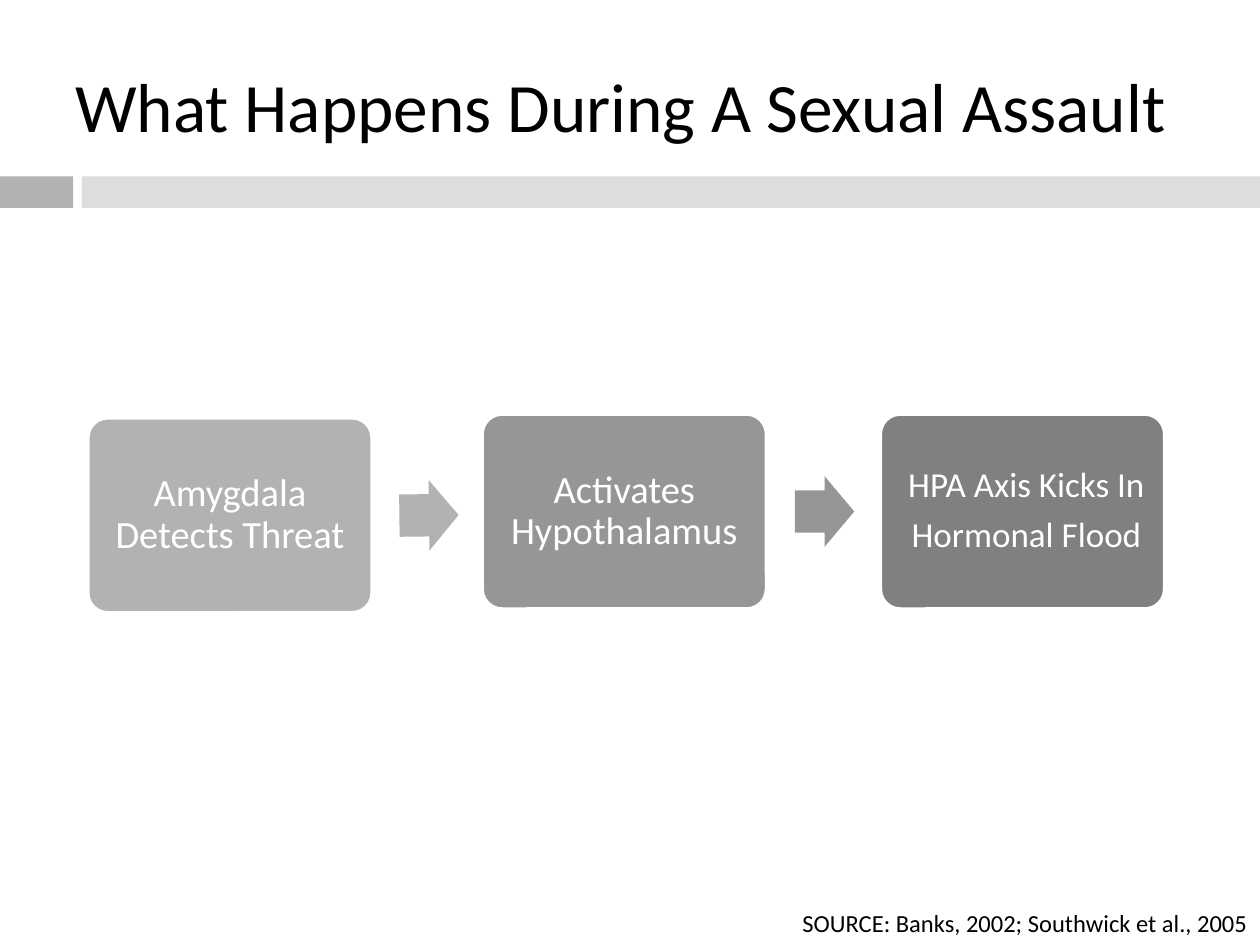
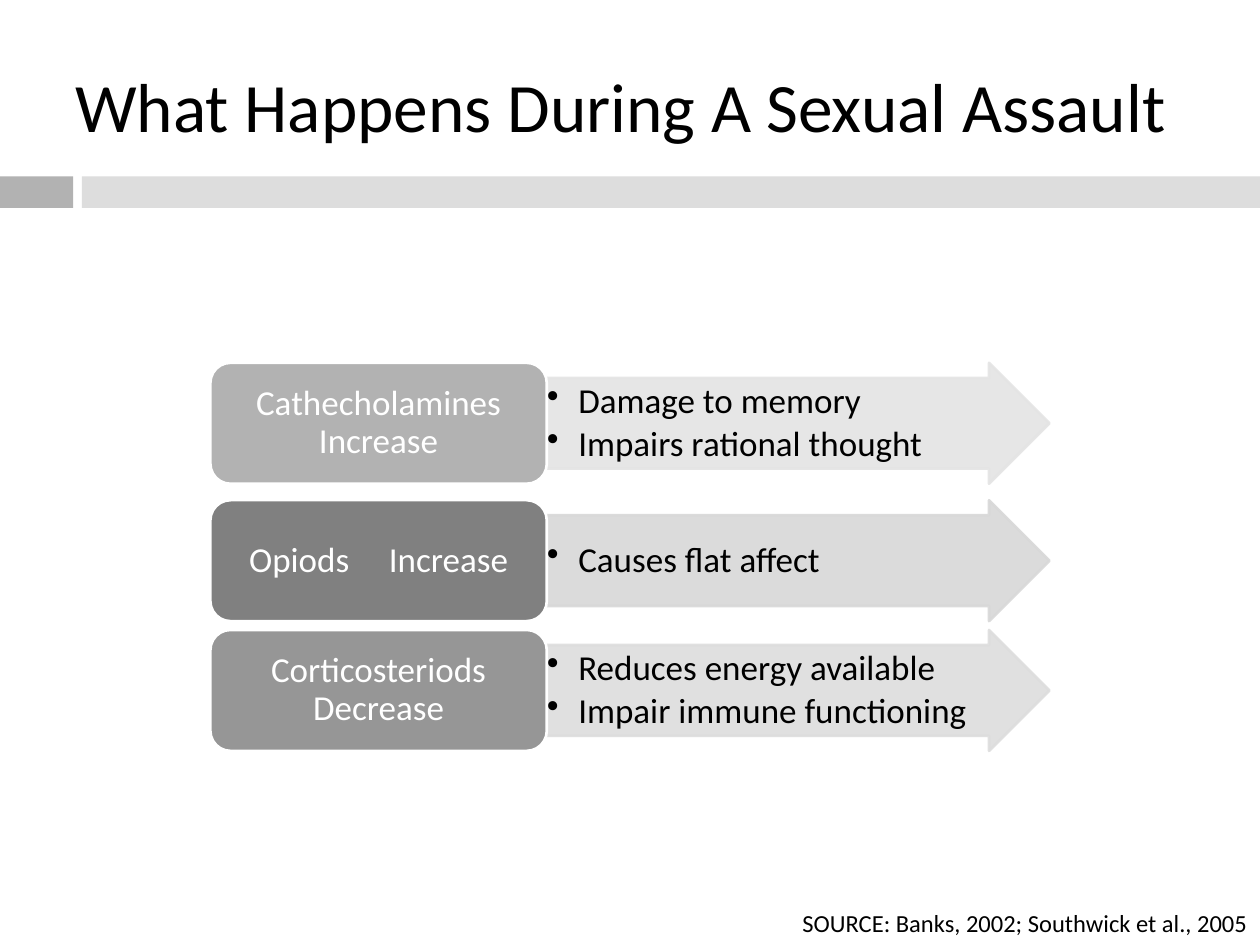
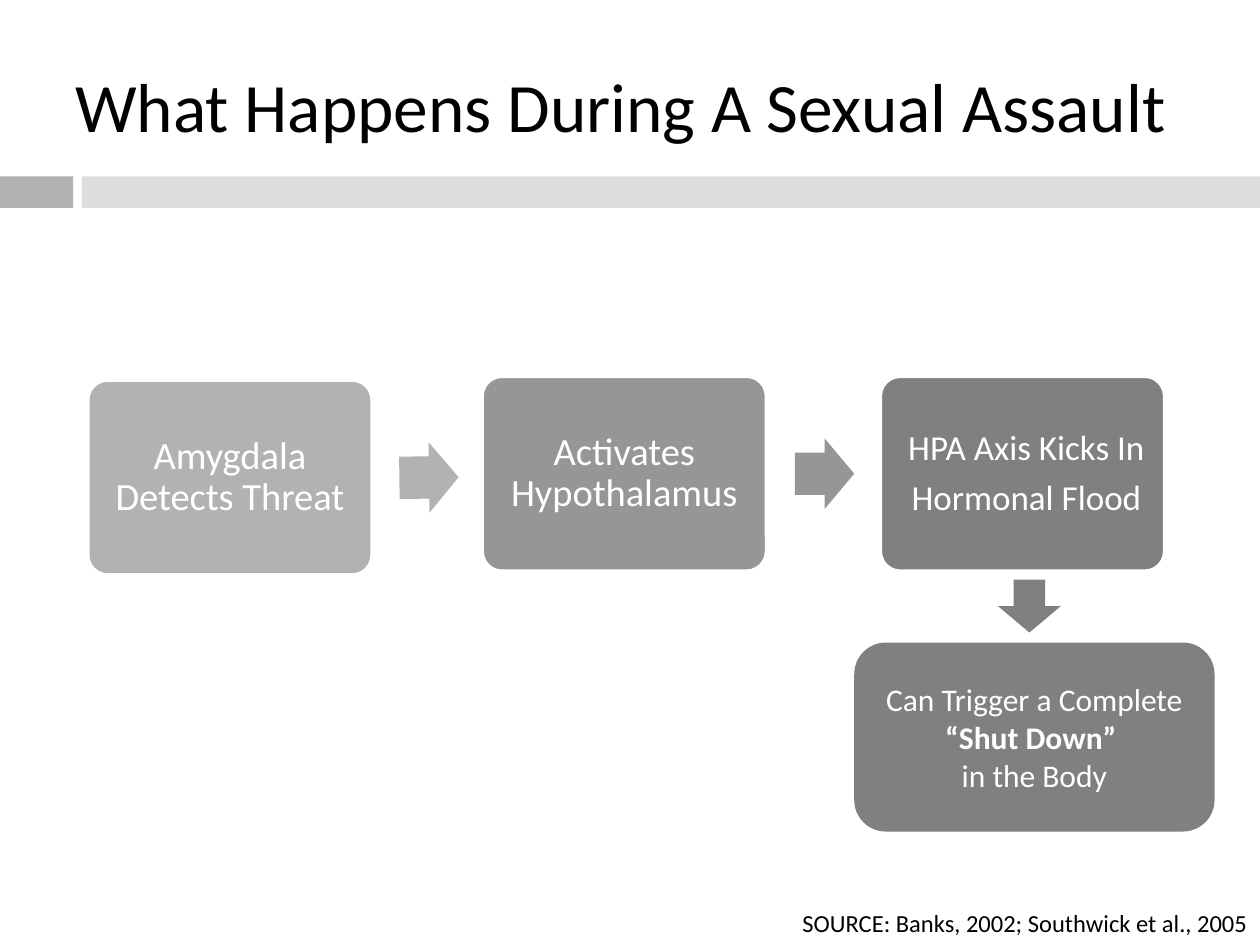
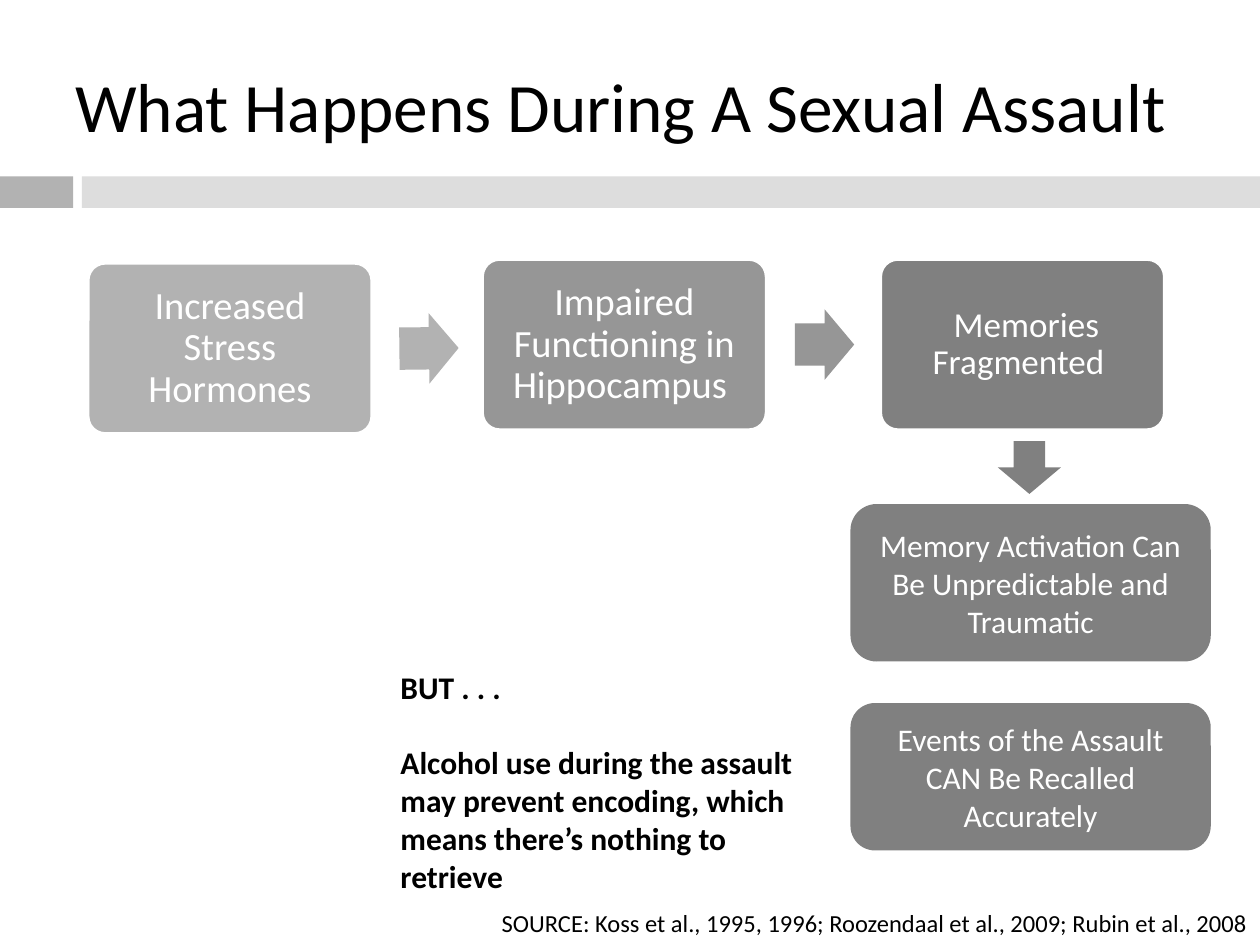
from lxml import etree
from pptx import Presentation
from pptx import util as u
from pptx.dml.color import RGBColor
from pptx.enum import shapes, text
from pptx.oxml import ns

FONT = "Calibri"
TITLE = "What Happens During A Sexual Assault"
COLORS = {
    "white": "FFFFFF",
    "black": "000000",
    "light": "B2B2B2",
    "medium": "969696",
    "dark": "808080",
    "band": "DDDDDD",
    "pale_light": "E4E4E4",
    "pale_medium": "DDDDDD",
    "pale_dark": "D8D8D8",
}
BOX_LEFTS = (0.7, 3.83, 6.99)
BOX_WIDTH = 2.25
BOX_COLORS = ("light", "medium", "dark")
ARROW_LEFTS = (3.17, 6.31)
ARROW_HEIGHT = 0.56
FIRST_BOX_DROP = 0.03
BANKS_SOURCE = "SOURCE: Banks, 2002; Southwick et al., 2005"
KOSS_SOURCE = "SOURCE: Koss et al., 1995, 1996; Roozendaal et al., 2009; Rubin et al., 2008"
STRESS_STEPS = (
    (["Amygdala Detects Threat"], 22),
    (["Activates Hypothalamus"], 22),
    ([" HPA Axis Kicks In", " Hormonal Flood"], 20),
)
MEMORY_STEPS = (
    (["Increased Stress Hormones"], 22),
    (["Impaired Functioning in Hippocampus "], 22),
    ([" Memories Fragmented "], 20),
)
HORMONES = (
    (2.88, "light", "Cathecholamines Increase",
     ["Damage to memory", "Impairs rational thought"]),
    (3.97, "dark", [("Opiods", {}), (" ", {"spacing": 18}), ("Increase", {})],
     ["Causes flat affect"]),
    (5.0, "medium", "Corticosteriods Decrease",
     ["Reduces energy available", "Impair immune functioning"]),
)


def rgb(name):
    return RGBColor.from_string(COLORS[name])


def place(left, top, width, height):
    return [u.Inches(value) for value in (left, top, width, height)]


def add_run(paragraph, content, size, color, bold=False, spacing=0):
    run = paragraph.add_run()
    run.text = content
    run.font.name = FONT
    run.font.size = u.Pt(size)
    run.font.bold = bold
    run.font.color.rgb = rgb(color)
    if spacing:
        run._r.get_or_add_rPr().set("spc", str(spacing * 100))


def add_bullet(paragraph):
    properties = paragraph._p.get_or_add_pPr()
    properties.set("marL", str(u.Inches(0.25)))
    properties.set("indent", str(u.Inches(-0.25)))
    etree.SubElement(properties, ns.qn("a:buChar")).set("char", "•")


def write(shape, paragraphs, size=18, color="black", bold=False, align="LEFT",
          anchor="TOP", insets=(0.1, 0.05), line_spacing=None, after=0, bullet=False):
    frame = shape.text_frame
    frame.word_wrap = True
    frame.vertical_anchor = text.MSO_ANCHOR[anchor]
    frame.margin_left = frame.margin_right = u.Inches(insets[0])
    frame.margin_top = frame.margin_bottom = u.Inches(insets[1])
    for index, content in enumerate(paragraphs):
        paragraph = frame.add_paragraph() if index else frame.paragraphs[0]
        paragraph.alignment = text.PP_ALIGN[align]
        if line_spacing:
            paragraph.line_spacing = line_spacing
        paragraph.space_after = u.Pt(after)
        if bullet:
            add_bullet(paragraph)
        runs = [(content, {})] if isinstance(content, str) else content
        for words, changes in runs:
            add_run(paragraph, words, **{"size": size, "color": color, "bold": bold, **changes})


def add_text(slide, box, paragraphs, **style):
    write(slide.shapes.add_textbox(*place(*box)), paragraphs, **style)


def add_block(slide, kind, box, fill, line=None, adjustments=(), rotation=0, opacity=None):
    shape = slide.shapes.add_shape(shapes.MSO_SHAPE[kind], *place(*box))
    shape.shadow.inherit = False
    shape.fill.solid()
    shape.fill.fore_color.rgb = rgb(fill)
    if line:
        shape.line.color.rgb = rgb(line)
        shape.line.width = u.Pt(1.5)
    else:
        shape.line.fill.background()
    for index, value in enumerate(adjustments):
        shape.adjustments[index] = value
    shape.rotation = rotation
    if opacity:
        for color in shape._element.spPr.iter(ns.qn("a:srgbClr")):
            etree.SubElement(color, ns.qn("a:alpha")).set("val", str(opacity * 1000))
    return shape


def start_slide(presentation, source, source_width):
    slide = presentation.slides.add_slide(presentation.slide_layouts[6])
    add_block(slide, "RECTANGLE", (0, 1.4, 0.58, 0.25), "light")
    add_block(slide, "RECTANGLE", (0.65, 1.4, 9.35, 0.25), "band")
    add_text(slide, (0.5, 0.25, 9, 1.17), [TITLE], size=39.6, anchor="MIDDLE")
    add_text(slide, (10 - source_width, 7.16, source_width, 0.34), [source],
             size=14, align="RIGHT")
    return slide


def add_flow(slide, top, height, steps):
    for index, (paragraphs, size) in enumerate(steps):
        drop = 0 if index else FIRST_BOX_DROP
        color = BOX_COLORS[index]
        box = (BOX_LEFTS[index], top + drop, BOX_WIDTH, height)
        shape = add_block(slide, "ROUNDED_RECTANGLE", box, color, "white", (0.1,))
        inset = 0.09 if size > 20 else 0.08
        write(shape, paragraphs, size=size, color="white", align="CENTER", anchor="MIDDLE",
              insets=(inset, inset), line_spacing=0.9, after=7)
        if index < len(ARROW_LEFTS):
            arrow_top = top + drop + (height - ARROW_HEIGHT) / 2
            add_block(slide, "RIGHT_ARROW", (ARROW_LEFTS[index], arrow_top, 0.47, ARROW_HEIGHT),
                      color, adjustments=(0.6, 0.5), rotation=0 if index else 359.3)


def add_hormone(slide, top, color, label, effects):
    pale = "pale_" + color
    arrow = add_block(slide, "RIGHT_ARROW", (4.33, top, 4, 0.96), pale, pale,
                      (0.75, 0.5), opacity=90)
    write(arrow, effects, size=20, anchor="MIDDLE", insets=(0.01, 0.01),
          line_spacing=0.9, after=3, bullet=True)
    box = add_block(slide, "ROUNDED_RECTANGLE", (1.67, top, 2.67, 0.96), color, "white")
    write(box, [label], size=20, color="white", align="CENTER", anchor="MIDDLE",
          insets=(0.08, 0.04), line_spacing=0.9, after=7)


def add_down_arrow(slide, top):
    add_block(slide, "DOWN_ARROW", (7.92, top, 0.5, 0.42), "dark")


def add_outcome(slide, left, top, height, paragraphs):
    shape = add_block(slide, "ROUNDED_RECTANGLE", (left, top, 2.86, height), "dark")
    write(shape, paragraphs, color="white", align="CENTER", anchor="MIDDLE")


def main():
    presentation = Presentation()
    presentation.slide_width = u.Inches(10)
    presentation.slide_height = u.Inches(7.5)

    slide = start_slide(presentation, BANKS_SOURCE, 3.92)
    add_flow(slide, 3.29, 1.54, STRESS_STEPS)

    slide = start_slide(presentation, BANKS_SOURCE, 4.25)
    for hormone in HORMONES:
        add_hormone(slide, *hormone)

    slide = start_slide(presentation, BANKS_SOURCE, 3.92)
    add_flow(slide, 2.99, 1.54, STRESS_STEPS)
    add_down_arrow(slide, 4.6)
    add_outcome(slide, 6.78, 5.1, 1.5, [
        [("Can Trigger a Complete ", {}), ("“Shut Down” ", {"bold": True})],
        "in the Body",
    ])

    slide = start_slide(presentation, KOSS_SOURCE, 6.67)
    add_flow(slide, 2.06, 1.35, MEMORY_STEPS)
    add_down_arrow(slide, 3.5)
    add_outcome(slide, 6.75, 4, 1.25,
                ["Memory Activation Can Be Unpredictable and Traumatic"])
    add_outcome(slide, 6.75, 5.58, 1.17,
                ["Events of the Assault CAN Be Recalled Accurately"])
    add_text(slide, (3.08, 5.25, 3.58, 1.62), [
        "BUT . . .",
        "Alcohol use during the assault may prevent encoding, "
        "which means there’s nothing to retrieve",
    ], bold=True, after=21.6)

    presentation.save("out.pptx")


if __name__ == "__main__":
    main()
